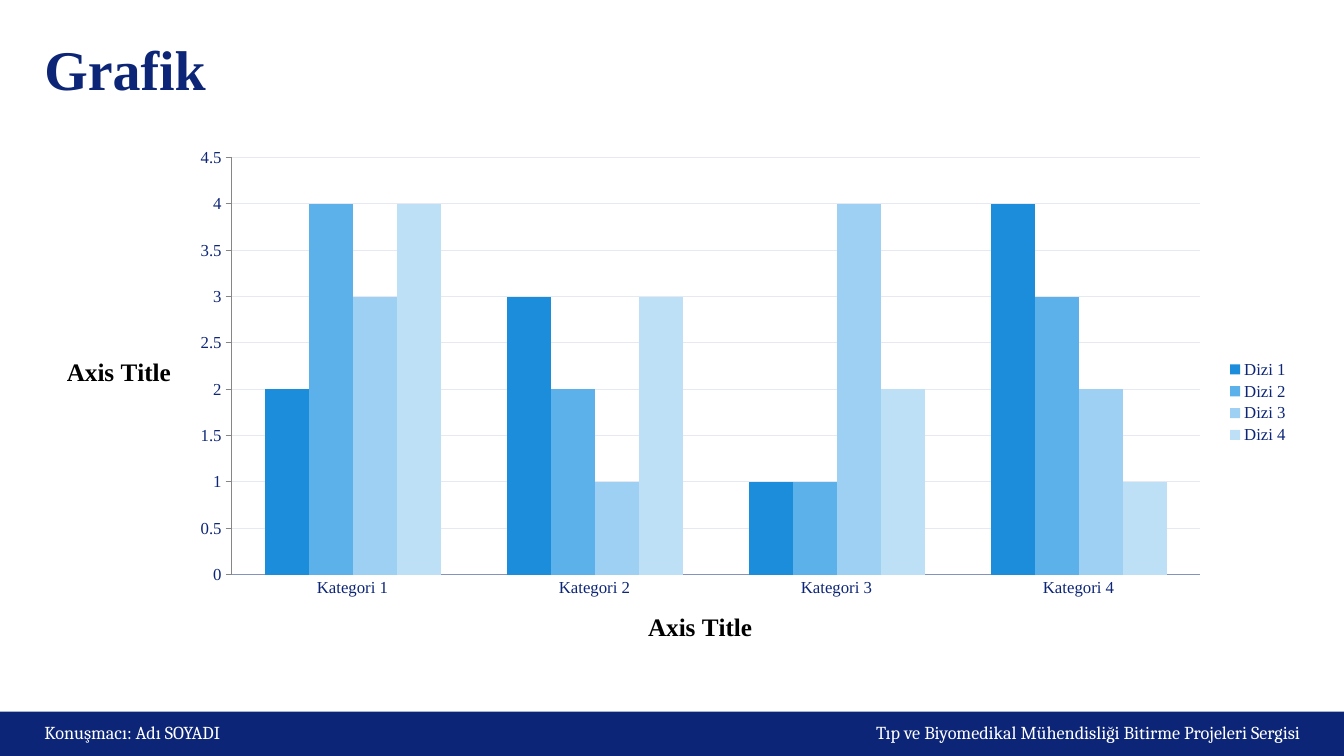
from pptx import Presentation
from pptx import util as u
from pptx.chart.data import CategoryChartData
from pptx.dml.color import RGBColor
from pptx.enum import chart as charts, shapes, text

NAVY = RGBColor(0x0C, 0x25, 0x77)
WHITE = RGBColor(0xFF, 0xFF, 0xFF)
BLACK = RGBColor(0, 0, 0)
AXIS_BLUE = RGBColor(0x85, 0x92, 0xBC)
AXIS_GREY = RGBColor(0x86, 0x86, 0x86)
GRID = RGBColor(0xE7, 0xE9, 0xF2)

CATEGORIES = [f"Kategori {number}" for number in range(1, 5)]
SERIES = [
    ("Dizi 1", (2, 3, 1, 4), RGBColor(0x1B, 0x8D, 0xDA)),
    ("Dizi 2", (4, 2, 1, 3), RGBColor(0x5C, 0xB1, 0xEB)),
    ("Dizi 3", (3, 1, 4, 2), RGBColor(0x9D, 0xD0, 0xF3)),
    ("Dizi 4", (4, 3, 2, 1), RGBColor(0xBE, 0xE0, 0xF7)),
]
WIDTH, HEIGHT = 1334, 750
MARGIN = 44
BAR_TOP, BAR_HEIGHT = 706, 44


def px(*lengths):
    """Turn px, 100 to the inch, into EMU."""
    return [u.Emu(length * 9144) for length in lengths]


def apply(target, values):
    for name, value in values.items():
        setattr(target, name, value)


class SlideBuilder:
    heading_font = "Times New Roman"
    footer_font = "Cambria"

    def __init__(self, presentation):
        self.slide = presentation.slides.add_slide(presentation.slide_layouts[5])

    def style_font(self, font, size, color, name=heading_font, bold=False):
        apply(font, {"name": name, "size": u.Pt(size), "bold": bold})
        font.color.rgb = color

    def style_line(self, line, color):
        line.color.rgb = color
        line.width = u.Pt(0.75)

    def fill_frame(self, frame, content, alignment):
        apply(frame, {
            "margin_left": 0, "margin_top": 0, "margin_right": 0, "margin_bottom": 0,
            "word_wrap": True, "auto_size": text.MSO_AUTO_SIZE.NONE,
            "vertical_anchor": text.MSO_ANCHOR.MIDDLE,
        })
        paragraph = frame.paragraphs[0]
        paragraph.alignment = alignment
        run = paragraph.add_run()
        run.text = content
        return paragraph, run.font

    def title(self, content, left, top, width, height):
        shape = self.slide.shapes.title
        places = px(left, top, width, height)
        apply(shape, dict(zip(("left", "top", "width", "height"), places)))
        _, font = self.fill_frame(shape.text_frame, content, text.PP_ALIGN.LEFT)
        self.style_font(font, 40, NAVY, bold=True)

    def bar(self, left, top, width, height):
        shape = self.slide.shapes.add_shape(
            shapes.MSO_SHAPE.RECTANGLE, *px(left, top, width, height))
        shape.shadow.inherit = False
        shape.fill.solid()
        shape.fill.fore_color.rgb = NAVY
        shape.line.fill.background()

    def footer(self, content, left, alignment):
        box = self.slide.shapes.add_textbox(
            *px(left, BAR_TOP, WIDTH // 2 - MARGIN, BAR_HEIGHT))
        paragraph, font = self.fill_frame(box.text_frame, content, alignment)
        apply(paragraph, {"line_spacing": 0.9, "space_before": u.Pt(6),
                          "space_after": u.Pt(6)})
        self.style_font(font, 13, WHITE, self.footer_font)

    def axis(self, axis, tick_mark, line_color):
        axis.major_tick_mark = tick_mark
        axis.minor_tick_mark = charts.XL_TICK_MARK.NONE
        self.style_font(axis.tick_labels.font, 12, NAVY)
        self.style_line(axis.format.line, line_color)
        frame = axis.axis_title.text_frame
        run = frame.paragraphs[0].add_run()
        run.text = "Axis Title"
        self.style_font(run.font, 18, BLACK, bold=True)
        properties = frame.paragraphs[0]._p.getparent().bodyPr
        properties.set("rot", "0")
        properties.set("vert", "horz")

    def column_chart(self, left, top, width, height):
        data = CategoryChartData()
        data.categories = CATEGORIES
        for name, values, _ in SERIES:
            data.add_series(name, values)
        chart = self.slide.shapes.add_chart(
            charts.XL_CHART_TYPE.COLUMN_CLUSTERED,
            *px(left, top, width, height), data).chart
        self.style_font(chart.font, 18, BLACK)
        apply(chart, {"has_title": False, "has_legend": True})
        apply(chart.legend, {"position": charts.XL_LEGEND_POSITION.RIGHT,
                             "include_in_layout": False})
        self.style_font(chart.legend.font, 12, NAVY)
        plot = chart.plots[0]
        apply(plot, {"gap_width": 150, "overlap": 0, "vary_by_categories": False})
        for series, (_, _, color) in zip(plot.series, SERIES):
            series.format.fill.solid()
            series.format.fill.fore_color.rgb = color
        self.axis(chart.category_axis, charts.XL_TICK_MARK.NONE, AXIS_BLUE)
        value_axis = chart.value_axis
        self.axis(value_axis, charts.XL_TICK_MARK.OUTSIDE, AXIS_GREY)
        apply(value_axis, {"minimum_scale": 0, "maximum_scale": 4.5,
                           "major_unit": 0.5})
        self.style_line(value_axis.major_gridlines.format.line, GRID)


def main():
    presentation = Presentation()
    presentation.slide_width, presentation.slide_height = px(WIDTH, HEIGHT)
    builder = SlideBuilder(presentation)
    builder.bar(0, BAR_TOP, WIDTH, BAR_HEIGHT)
    builder.title("Grafik", MARGIN, 44, WIDTH - 2 * MARGIN, 47)
    builder.column_chart(MARGIN, 137, WIDTH - 2 * MARGIN, 524)
    builder.footer("Konuşmacı: Adı SOYADI", MARGIN, text.PP_ALIGN.LEFT)
    builder.footer("Tıp ve Biyomedikal Mühendisliği Bitirme Projeleri Sergisi",
                   WIDTH // 2, text.PP_ALIGN.RIGHT)
    presentation.save("out.pptx")


if __name__ == "__main__":
    main()
